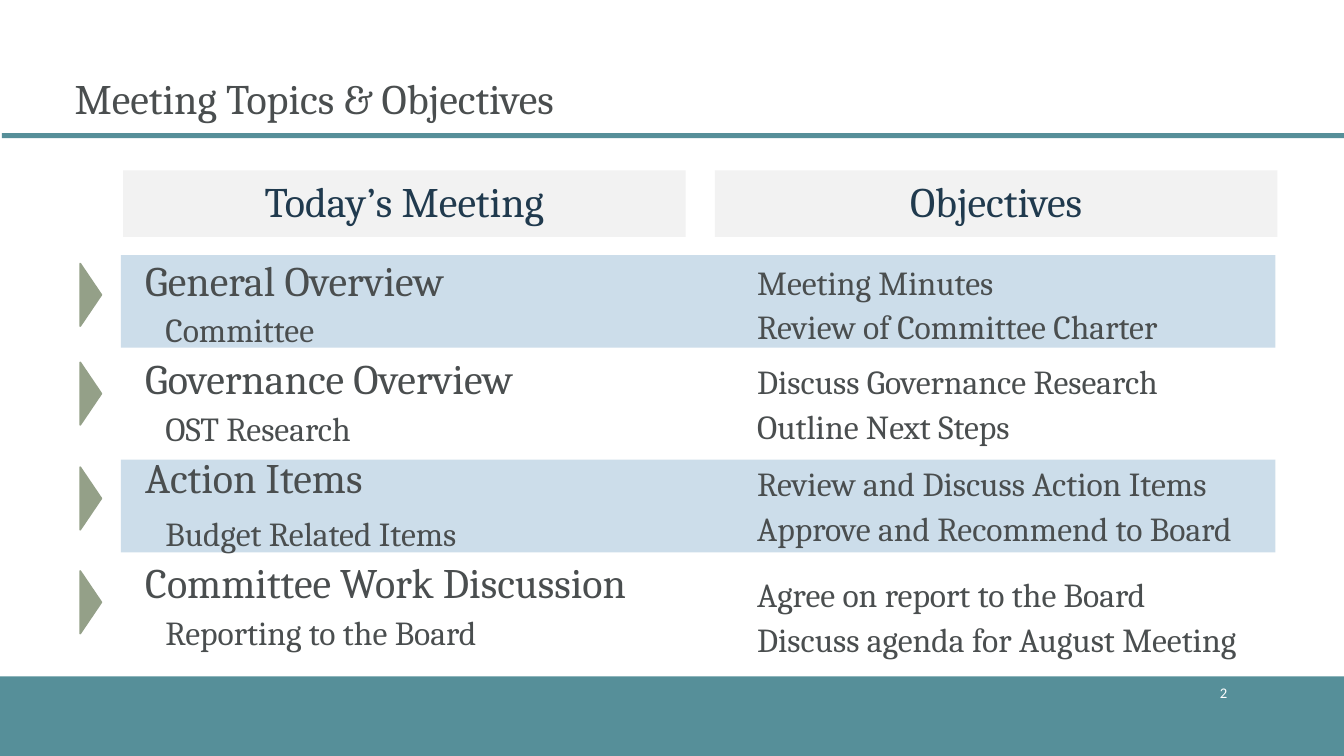
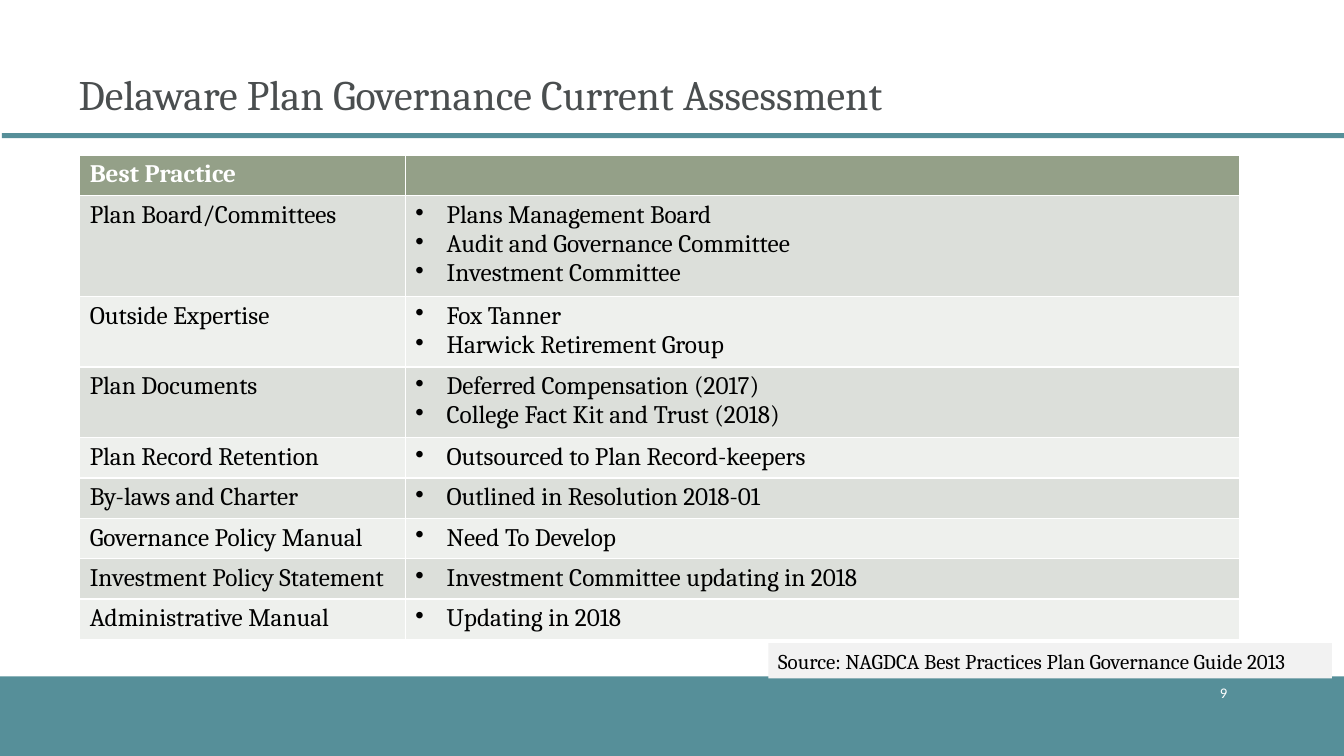
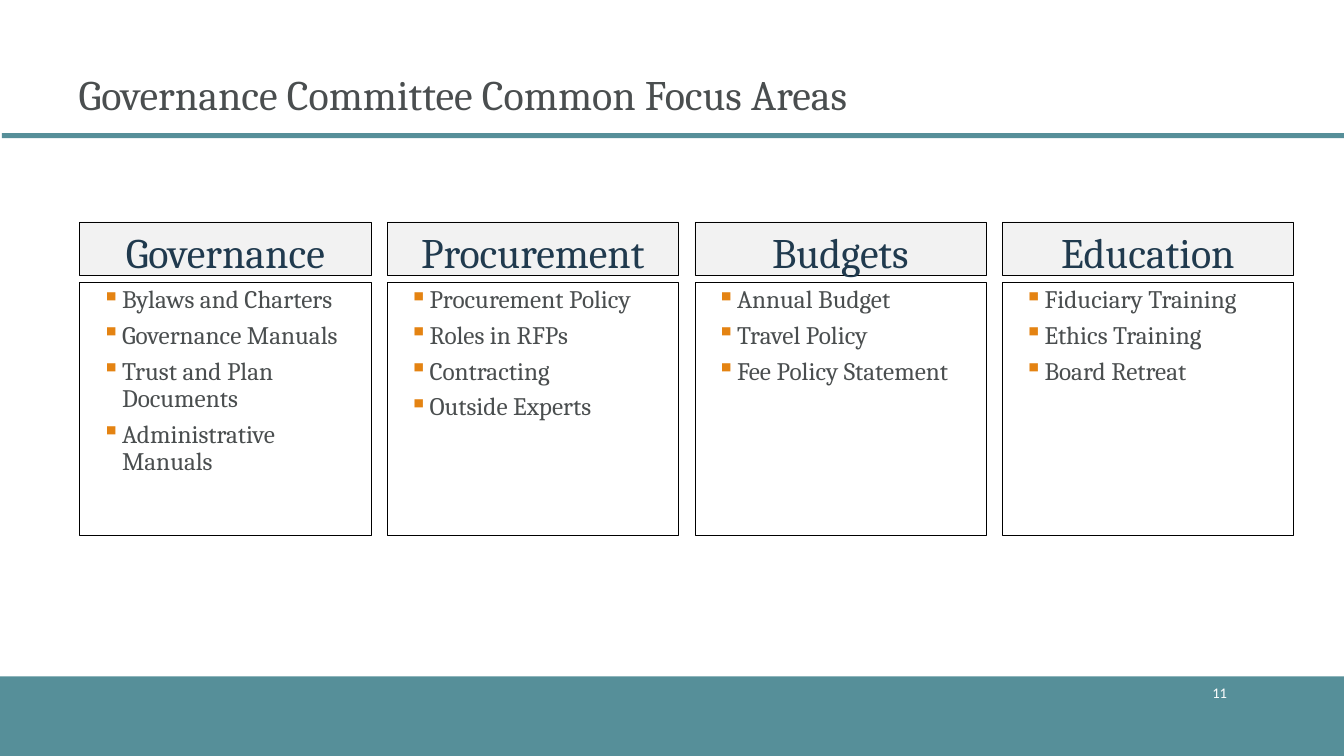
import pptx
import pptx.dml.color
import pptx.enum.shapes
import pptx.enum.text
import pptx.oxml
import pptx.oxml.ns
import pptx.util
from lxml import etree

Inches = pptx.util.Inches
Pt = pptx.util.Pt
RGBColor = pptx.dml.color.RGBColor
Shapes = pptx.enum.shapes.MSO_SHAPE
Align = pptx.enum.text.PP_ALIGN
Anchor = pptx.enum.text.MSO_ANCHOR
qn = pptx.oxml.ns.qn

TEAL = RGBColor(0x56, 0x8F, 0x99)
SAGE = RGBColor(0x94, 0xA0, 0x88)
SAGE_MEDIUM = RGBColor(0xDC, 0xDF, 0xDA)
SAGE_LIGHT = RGBColor(0xEE, 0xF0, 0xED)
PALE_BLUE = RGBColor(0xCC, 0xDD, 0xEA)
PALE_GREY = RGBColor(0xF2, 0xF2, 0xF2)
NAVY = RGBColor(0x20, 0x3A, 0x4E)
CHARCOAL = RGBColor(0x4A, 0x4E, 0x4F)
ORANGE = RGBColor(0xE4, 0x83, 0x12)
BLACK = RGBColor(0, 0, 0)
WHITE = RGBColor(0xFF, 0xFF, 0xFF)


def add_box(slide, left, top, width, height, fill=None, line=None, side_inset=0.1):
    """Add a rectangle whose text starts at the top."""
    box = slide.shapes.add_shape(Shapes.RECTANGLE, Inches(left), Inches(top),
                                 Inches(width), Inches(height))
    box.shadow.inherit = False
    if fill is None:
        box.fill.background()
    else:
        box.fill.solid()
        box.fill.fore_color.rgb = fill
    if line is None:
        box.line.fill.background()
    else:
        box.line.color.rgb = line
        box.line.width = Pt(0.25)
    frame = box.text_frame
    frame.word_wrap = True
    frame.vertical_anchor = Anchor.TOP
    frame.margin_left = frame.margin_right = Inches(side_inset)
    return box


def write(frame, text, size, colour, align=Align.LEFT, indent=0, hanging=0, bullet=None,
          bullet_colour=None, line_spacing=None, before=0, after=0, font="Cambria", bold=False):
    """Add one paragraph to a text frame."""
    first = not frame.text
    paragraph = frame.paragraphs[0] if first else frame.add_paragraph()
    paragraph.text = text
    paragraph.alignment = align
    paragraph.line_spacing = line_spacing
    paragraph.space_before = Pt(0 if first else before)
    paragraph.space_after = Pt(after)
    properties = paragraph._p.get_or_add_pPr()
    properties.set("marL", str(Inches(indent)))
    properties.set("indent", str(-Inches(hanging)))
    if bullet_colour is not None:
        colour_element = etree.SubElement(properties, qn("a:buClr"))
        etree.SubElement(colour_element, qn("a:srgbClr")).set("val", str(bullet_colour))
    if bullet:
        etree.SubElement(properties, qn("a:buChar")).set("char", bullet)
    else:
        etree.SubElement(properties, qn("a:buNone"))
    paragraph.font.name = font
    paragraph.font.size = Pt(size)
    paragraph.font.bold = bold
    paragraph.font.color.rgb = colour


LIST_STYLE = {"line_spacing": 0.9, "before": 2, "after": 4}

presentation = pptx.Presentation()
presentation.slide_width = Inches(13.33)
presentation.slide_height = Inches(7.5)

# Slides with titles and page numbers
CONTENT_LAYOUT, TITLE_LAYOUT = 1, 5
pages = [
    (CONTENT_LAYOUT, "Meeting Topics & Objectives", "2", 0.64, 0.73, 0.58),
    (TITLE_LAYOUT, "Delaware Plan Governance Current Assessment", "9", 0.68, 0.69, 0.78),
    (TITLE_LAYOUT, "Governance Committee Common Focus Areas", "11", 0.68, 0.69, 0.78),
]
for layout, title_text, number, left, top, height in pages:
    slide = presentation.slides.add_slide(presentation.slide_layouts[layout])
    title = slide.shapes.title
    title.left, title.top = Inches(left), Inches(top)
    title.width, title.height = Inches(11), Inches(height)
    frame = title.text_frame
    frame.auto_size = pptx.enum.text.MSO_AUTO_SIZE.NONE
    frame.vertical_anchor = Anchor.TOP
    frame.margin_left = frame.margin_right = 0
    write(frame, title_text, 30, CHARCOAL, indent=0.1, line_spacing=0.9, after=2)

    number_box = slide.shapes.add_textbox(Inches(10.81), Inches(6.71), Inches(1.46), Inches(0.33))
    number_box.text_frame.word_wrap = True
    number_box.text_frame.vertical_anchor = Anchor.MIDDLE
    write(number_box.text_frame, number, 10.5, WHITE, align=Align.RIGHT, font="Calibri")

topics_slide, assessment_slide, focus_slide = presentation.slides

# Title rule and footer band, moved to the master
for left, top, height in [(0.02, 1.32, 0.05), (0, 6.71, 0.79)]:
    band = add_box(topics_slide, left, top, 13.33, height, fill=TEAL)
    presentation.slide_master.shapes.element.insert(2, band.element)

# Topics: column headings and row bands
for heading, left in [("Today’s Meeting", 1.22), ("Objectives", 7.09)]:
    box = add_box(topics_slide, left, 1.69, 5.58, 0.66, fill=PALE_GREY)
    write(box.text_frame, heading, 30, NAVY, align=Align.CENTER)
for top in (2.53, 4.56):
    band = add_box(topics_slide, 1.2, top, 11.45, 0.92, fill=PALE_BLUE)
    topics_slide.shapes.element.insert(2, band.element)

# Topics: list, objectives and arrows
topics = [
    ("General Overview", "Committee", 2,
     ["Meeting Minutes", "Review of Committee Charter"], 2.59, 2.82),
    ("Governance Overview", "OST Research", 2,
     ["Discuss Governance Research", "Outline Next Steps"], 3.58, 3.8),
    ("Action Items", "Budget Related Items", 7,
     ["Review and Discuss Action Items", "Approve and Recommend to Board"], 4.59, 4.84),
    ("Committee Work Discussion", "Reporting to the Board", 2,
     ["Agree on report to the Board", "Discuss agenda for August Meeting"], 5.69, 5.87),
]
body = topics_slide.placeholders[1]
body.left, body.top, body.width, body.height = Inches(1.22), Inches(2.53), Inches(5.58), Inches(4)
body.text_frame.auto_size = pptx.enum.text.MSO_AUTO_SIZE.NONE
body.text_frame.margin_left = body.text_frame.margin_right = 0
for topic, detail, detail_gap, objectives, objectives_top, arrow_top in topics:
    write(body.text_frame, topic, 30, CHARCOAL, indent=0.22, **LIST_STYLE)
    write(body.text_frame, detail, 24, CHARCOAL, indent=0.42,
          **{**LIST_STYLE, "before": detail_gap})
    body.text_frame.paragraphs[-1].level = 1

    box = add_box(topics_slide, 7.09, objectives_top, 5.57, 0.92, side_inset=0)
    for objective in objectives:
        write(box.text_frame, objective, 24, CHARCOAL, indent=0.42, **LIST_STYLE)

    arrow = topics_slide.shapes.add_shape(Shapes.ISOSCELES_TRIANGLE, Inches(0.59),
                                          Inches(arrow_top), Inches(0.62), Inches(0.21))
    arrow.rotation = 90
    arrow.shadow.inherit = False
    arrow.fill.solid()
    arrow.fill.fore_color.rgb = SAGE
    arrow.line.color.rgb = SAGE
    arrow.line.width = Pt(1.25)

# Assessment: table
practices = [
    ("Best Practice", []),
    ("Plan Board/Committees",
     ["Plans Management Board", "Audit and Governance Committee", "Investment Committee"]),
    ("Outside Expertise", ["Fox Tanner", "Harwick Retirement Group"]),
    ("Plan Documents", ["Deferred Compensation (2017)", "College Fact Kit and Trust (2018)"]),
    ("Plan Record Retention", ["Outsourced to Plan Record-keepers"]),
    ("By-laws and Charter", ["Outlined in Resolution 2018-01"]),
    ("Governance Policy Manual", ["Need To Develop"]),
    ("Investment Policy Statement", ["Investment Committee updating in 2018"]),
    ("Administrative Manual", ["Updating in 2018"]),
]
table = assessment_slide.shapes.add_table(len(practices), 2, Inches(0.79), Inches(1.54),
                                          Inches(11.5), Inches(4.31)).table
table.columns[0].width, table.columns[1].width = Inches(3.23), Inches(8.27)
for row, (practice, findings) in enumerate(practices):
    header = row == 0
    table.rows[row].height = Inches(0.37 + 0.25 * max(len(findings) - 1, 0))
    name_cell, findings_cell = table.cell(row, 0), table.cell(row, 1)
    for cell in (name_cell, findings_cell):
        cell.fill.solid()
        cell.fill.fore_color.rgb = SAGE if header else (SAGE_LIGHT, SAGE_MEDIUM)[row % 2]
    write(name_cell.text_frame, practice, 18, WHITE if header else BLACK, bold=header)
    for finding in findings:
        write(findings_cell.text_frame, finding, 18, BLACK, indent=0.31, hanging=0.31, bullet="•")

# Assessment: source
source = add_box(assessment_slide, 7.62, 6.38, 5.59, 0.35, fill=PALE_GREY)
write(source.text_frame, "Source: NAGDCA Best Practices Plan Governance Guide 2013", 15, BLACK)

# Focus areas: four equal columns
focus_areas = [
    ("Governance", ["Bylaws and Charters", "Governance Manuals", "Trust and Plan Documents",
                    "Administrative Manuals"]),
    ("Procurement", ["Procurement Policy", "Roles in RFPs", "Contracting", "Outside Experts"]),
    ("Budgets", ["Annual Budget", "Travel Policy", "Fee Policy Statement"]),
    ("Education", ["Fiduciary Training", "Ethics Training", "Board Retreat"]),
]
for column, (area, items) in enumerate(focus_areas):
    left = 0.79 + 3.05 * column
    box = add_box(focus_slide, left, 2.8, 2.89, 2.51, line=BLACK, side_inset=0)
    for item in items:
        write(box.text_frame, item, 18, CHARCOAL, indent=0.42, hanging=0.2,
              bullet="▪", bullet_colour=ORANGE, **LIST_STYLE)
    heading = add_box(focus_slide, left, 2.2, 2.89, 0.53, fill=PALE_GREY, line=BLACK)
    write(heading.text_frame, area, 30, NAVY, align=Align.CENTER)

presentation.save("out.pptx")
